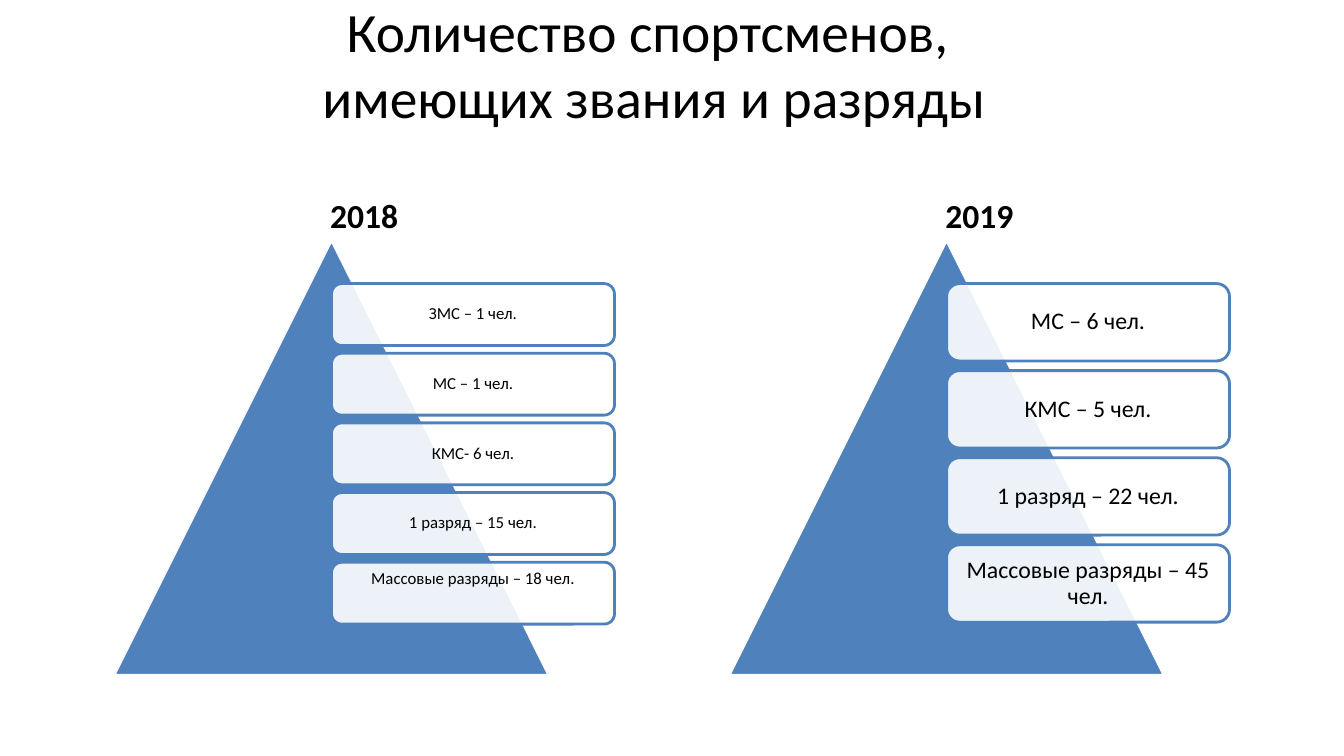
"""Build the slide comparing athletes with titles and ranks by year."""
from dataclasses import dataclass

from lxml import etree
from pptx import Presentation
from pptx.dml.color import RGBColor
from pptx.enum.shapes import MSO_SHAPE
from pptx.enum.text import MSO_ANCHOR, MSO_AUTO_SIZE, PP_ALIGN
from pptx.oxml.ns import qn
from pptx.util import Cm, Pt

TRIANGLE = MSO_SHAPE.ISOSCELES_TRIANGLE
ROUNDED = MSO_SHAPE.ROUNDED_RECTANGLE
CENTER = PP_ALIGN.CENTER
TOP, MIDDLE, BOTTOM = MSO_ANCHOR.TOP, MSO_ANCHOR.MIDDLE, MSO_ANCHOR.BOTTOM
NO_AUTOFIT = MSO_AUTO_SIZE.NONE
COMPARISON_LAYOUT = 4


@dataclass(frozen=True)
class Theme:
    """Colours, font and type sizes of the slide."""
    accent: RGBColor = RGBColor(0x4F, 0x81, 0xBD)
    paper: RGBColor = RGBColor(0xFF, 0xFF, 0xFF)
    ink: RGBColor = RGBColor(0, 0, 0)
    font: str = "Calibri"
    title: float = 39.6
    heading: float = 24
    large: float = 17
    small: float = 12
    line: float = 2
    box_opacity: int = 90


THEME = Theme()
PYRAMID_TOP = 6.05
PYRAMID_SIZE = 10.97


def set_text(sp, text, size, anchor, bold=False):
    """Write one centred paragraph into a shape."""
    tf = sp.text_frame
    tf.text = text
    tf.word_wrap = True
    tf.auto_size = NO_AUTOFIT
    tf.vertical_anchor = anchor
    p = tf.paragraphs[0]
    p.alignment = CENTER
    p.space_before = Pt(0)
    p.font.name = THEME.font
    p.font.size = Pt(size)
    p.font.bold = bold
    p.font.color.rgb = THEME.ink


def place(sp, left, top, width, height):
    """Move a placeholder to a position given in centimetres."""
    sp.left, sp.top, sp.width, sp.height = map(Cm, (left, top, width, height))


def add_shape(group, kind, left, top, width, height, fill, line):
    """Add a flat shape with the given fill and outline."""
    sp = group.shapes.add_shape(kind, Cm(left), Cm(top), Cm(width), Cm(height))
    sp.shadow.inherit = False
    sp.fill.solid()
    sp.fill.fore_color.rgb = fill
    sp.line.color.rgb = line
    sp.line.width = Pt(THEME.line)
    return sp


def set_opacity(sp, percent):
    """Make the solid fill of a shape partly transparent."""
    color = sp._element.spPr.find(qn("a:solidFill")).find(qn("a:srgbClr"))
    etree.SubElement(color, qn("a:alpha"), val=str(percent * 1000))


def add_box(group, left, top, height, text, size, inset, anchor):
    """Add one translucent rank box."""
    sp = add_shape(group, ROUNDED, left, top, PYRAMID_SIZE * 0.65, height,
                   THEME.paper, THEME.accent)
    set_opacity(sp, THEME.box_opacity)
    set_text(sp, text, size, anchor)
    tf = sp.text_frame
    tf.margin_left = tf.margin_right = Cm(inset)
    tf.margin_top = tf.margin_bottom = Cm(inset)
    tf.paragraphs[0].line_spacing = 0.9


def add_pyramid(s, left, ranks, size, inset, last_anchor):
    """Add a triangle with its evenly stacked rank boxes."""
    group = s.shapes.add_group_shape()
    add_shape(group, TRIANGLE, left, PYRAMID_TOP, PYRAMID_SIZE, PYRAMID_SIZE,
              THEME.accent, THEME.paper)
    pitch = PYRAMID_SIZE * 0.8 / len(ranks)
    first_top = PYRAMID_TOP + PYRAMID_SIZE * 0.1
    for i, text in enumerate(ranks):
        anchor = last_anchor if i == len(ranks) - 1 else MIDDLE
        add_box(group, left + PYRAMID_SIZE / 2, first_top + i * pitch,
                pitch * 8 / 9, text, size, inset, anchor)


def main():
    """Build and save the presentation."""
    prs = Presentation()
    prs.slide_width, prs.slide_height = Cm(33.87), Cm(19.05)
    s = prs.slides.add_slide(prs.slide_layouts[COMPARISON_LAYOUT])
    title, heading_2018, content_2018, heading_2019, content_2019 = s.placeholders
    for sp in (content_2018, content_2019):
        sp._element.getparent().remove(sp._element)

    place(title, 1.24, 0, 30.48, 3.18)
    set_text(title, "Количество спортсменов, \vимеющих звания и разряды",
             THEME.title, MIDDLE)

    years = (
        (heading_2018, "2018", 1.7, THEME.small, 0.12, TOP,
         ("ЗМС – 1 чел.", "МС – 1 чел.", "КМС- 6 чел.",
          "1 разряд – 15 чел.", "Массовые разряды – 18 чел.")),
        (heading_2019, "2019", 17.2, THEME.large, 0.17, MIDDLE,
         ("МС – 6 чел.", "КМС – 5 чел.",
          "1 разряд – 22 чел.", "Массовые разряды – 45 чел.")),
    )
    for heading, year, left, size, inset, last_anchor, ranks in years:
        place(heading, left, 4.27, 14.96, 1.78)
        set_text(heading, year, THEME.heading, BOTTOM, bold=True)
        add_pyramid(s, left + 1.17, ranks, size, inset, last_anchor)

    prs.save("out.pptx")


if __name__ == "__main__":
    main()
